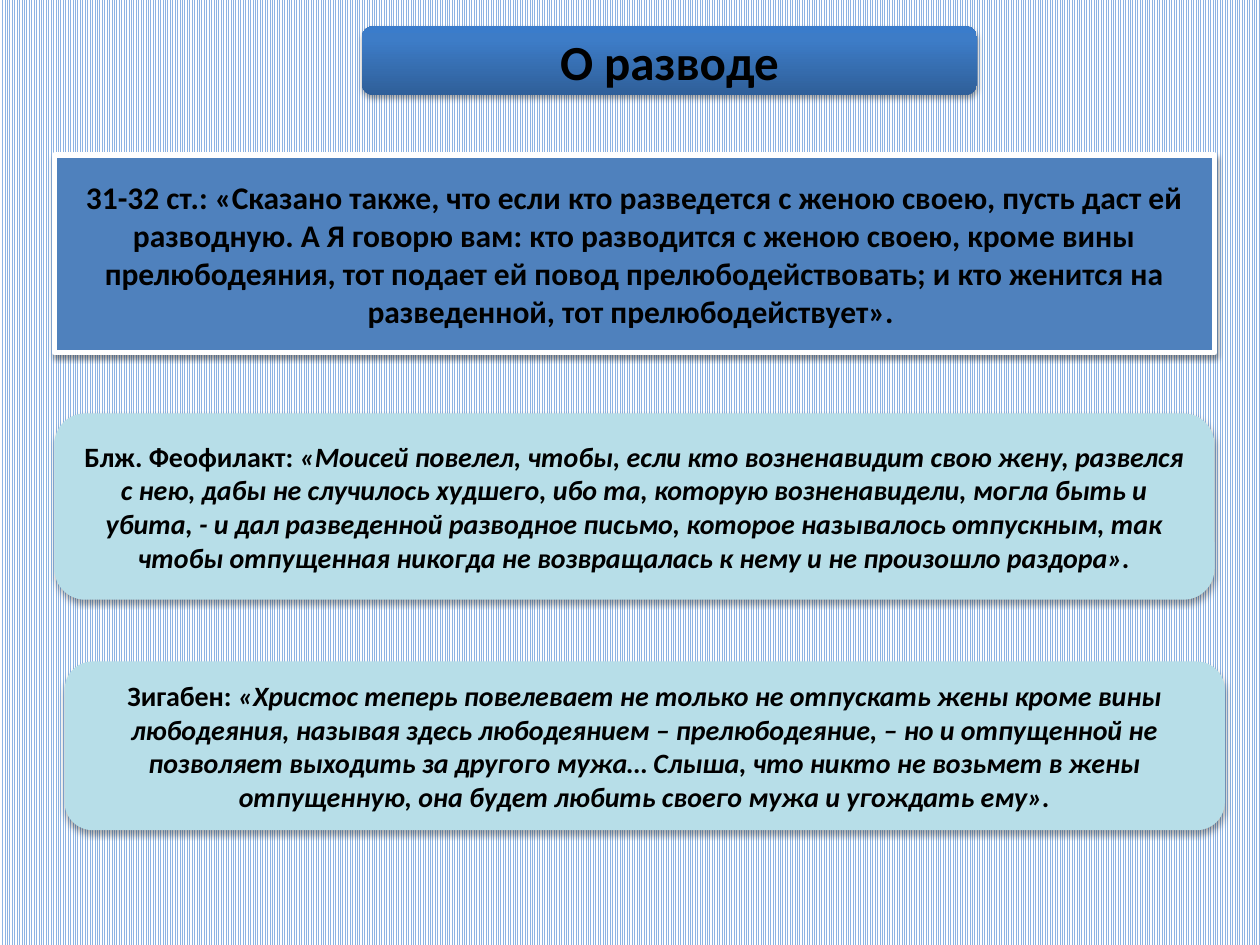
from copy import deepcopy

from lxml.etree import SubElement
from pptx import Presentation
from pptx.dml.color import RGBColor
from pptx.enum.dml import MSO_PATTERN
from pptx.enum.shapes import MSO_SHAPE as Preset
from pptx.enum.text import MSO_ANCHOR as Anchor, PP_ALIGN as Align
from pptx.oxml.ns import qn
from pptx.util import Pt

BLACK = RGBColor(0x00, 0x00, 0x00)
WHITE = RGBColor(0xFF, 0xFF, 0xFF)
STRIPE = RGBColor(0x8E, 0xB4, 0xE3)
VERSE_BLUE = RGBColor(0x4F, 0x81, 0xBD)
COMMENT_BLUE = RGBColor(0xB7, 0xDE, 0xE8)
TITLE_STOPS = [
    (0, RGBColor(0x2F, 0x5F, 0x99)),
    (0.8, RGBColor(0x3D, 0x7C, 0xC7)),
    (1, RGBColor(0x3A, 0x7C, 0xCB)),
]

TITLE = "О разводе"
VERSE = (
    "31-32 ст.: «Сказано также, что если кто разведется с женою своею, пусть даст ей "
    "разводную. А Я говорю вам: кто разводится с женою своею, кроме вины прелюбодеяния, "
    "тот подает ей повод прелюбодействовать; и кто женится на разведенной, "
    "тот прелюбодействует». "
)
THEOPHYLACT = (
    "«Моисей повелел, чтобы, если кто возненавидит свою жену, развелся с нею, дабы не "
    "случилось худшего, ибо та, которую возненавидели, могла быть и убита, - и дал "
    "разведенной разводное письмо, которое называлось отпускным, так чтобы отпущенная "
    "никогда не возвращалась к нему и не произошло раздора»."
)
ZIGABEN = (
    "«Христос теперь повелевает не только не отпускать жены кроме вины любодеяния, "
    "называя здесь любодеянием – прелюбодеяние, – но и отпущенной не позволяет выходить "
    "за другого мужа… Слыша, что никто не возьмет в жены отпущенную, она будет любить "
    "своего мужа и угождать ему»."
)


def add_shadow(shape, opacity, blur, distance):
    shape.shadow.inherit = False
    effects = shape._element.spPr.find(qn("a:effectLst"))
    shadow = SubElement(
        effects, qn("a:outerShdw"), blurRad=str(Pt(blur)), dist=str(Pt(distance)),
        dir="5400000", rotWithShape="0",
    )
    color = SubElement(shadow, qn("a:srgbClr"), val=str(BLACK))
    SubElement(color, qn("a:alpha"), val=str(opacity * 1000))


def add_panel(page, preset, box, spans, size):
    panel = page.shapes.add_shape(preset, *(Pt(length) for length in box))
    panel.line.fill.background()
    frame = panel.text_frame
    frame.word_wrap = True
    frame.vertical_anchor = Anchor.MIDDLE
    para = frame.paragraphs[0]
    para.alignment = Align.CENTER
    for text, italic in spans:
        span = para.add_run()
        span.text = text
        span.font.name = "Calibri"
        span.font.size = Pt(size)
        span.font.bold = True
        span.font.italic = italic
        span.font.color.rgb = BLACK
    return panel


def add_title(page, box):
    panel = add_panel(page, Preset.ROUNDED_RECTANGLE, box, [(TITLE, False)], 28)
    panel.fill.gradient()
    panel.fill.gradient_angle = 90
    first_stop = panel._element.spPr.find(".//" + qn("a:gs"))
    first_stop.addnext(deepcopy(first_stop))
    for stop, (position, color) in zip(panel.fill.gradient_stops, TITLE_STOPS):
        stop.position = position
        stop.color.rgb = color
    add_shadow(panel, 35, 3.1, 1.8)


def add_verse(page, box):
    panel = add_panel(page, Preset.RECTANGLE, box, [(VERSE, False)], 18)
    panel.fill.solid()
    panel.fill.fore_color.rgb = VERSE_BLUE
    panel.line.color.rgb = WHITE
    panel.line.width = Pt(3)
    add_shadow(panel, 38, 3.1, 1.6)


def add_comment(page, box, author, quote):
    spans = [(author + " ", False), (quote, True)]
    panel = add_panel(page, Preset.ROUNDED_RECTANGLE, box, spans, 16)
    panel.fill.solid()
    panel.fill.fore_color.rgb = COMMENT_BLUE
    add_shadow(panel, 32, 3.5, 2.2)


def main():
    deck = Presentation()
    deck.slide_width, deck.slide_height = Pt(720), Pt(540)
    page = deck.slides.add_slide(deck.slide_layouts[6])
    backdrop = page.background.fill
    backdrop.patterned()
    backdrop.pattern = MSO_PATTERN.NARROW_VERTICAL
    backdrop.fore_color.rgb = STRIPE
    backdrop.back_color.rgb = WHITE

    add_comment(page, (31, 236.2, 663, 106.5), "Блж. Феофилакт:", THEOPHYLACT)
    add_title(page, (206.8, 15, 351.5, 39.5))
    add_verse(page, (31, 88.6, 663, 113))
    add_comment(page, (36.9, 378, 663, 96.4), "Зигабен:", ZIGABEN)
    deck.save("out.pptx")


if __name__ == "__main__":
    main()
